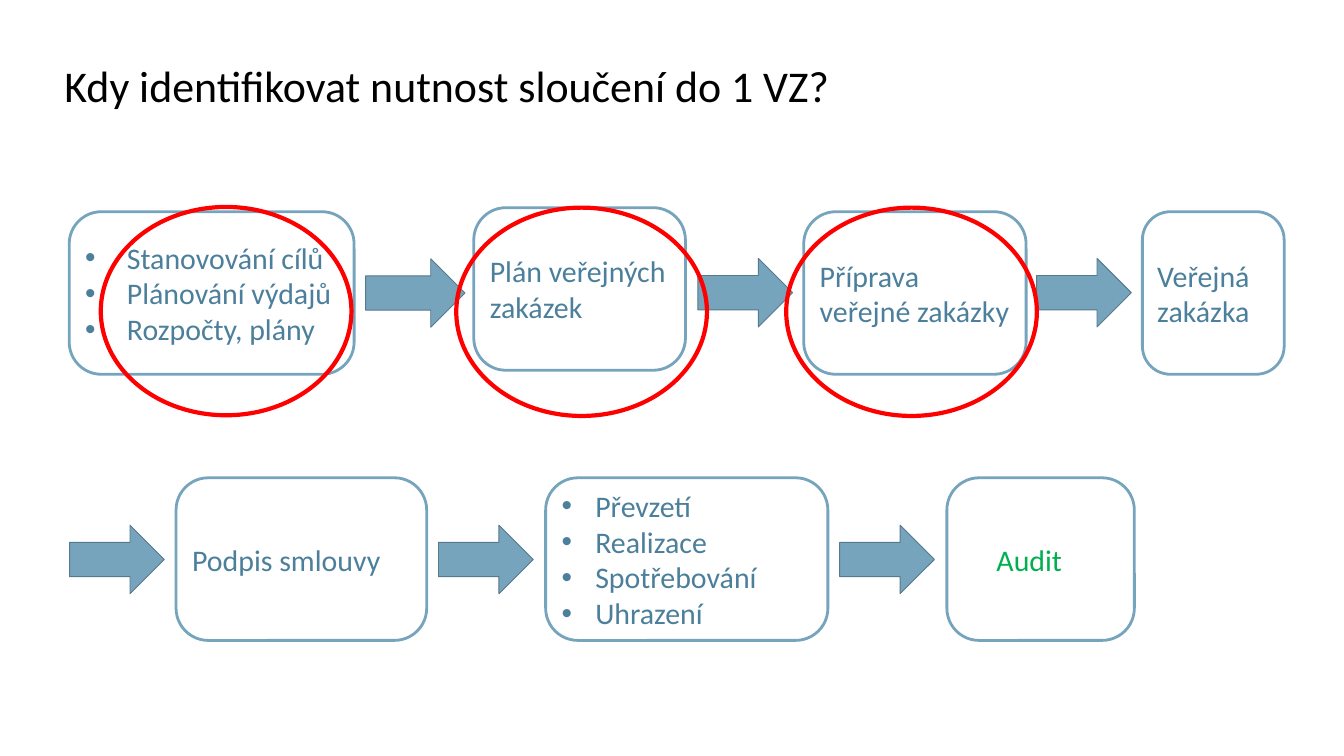
from lxml.etree import SubElement
from pptx import Presentation
from pptx.dml.color import RGBColor
from pptx.enum.shapes import MSO_SHAPE
from pptx.enum.text import MSO_ANCHOR, PP_ALIGN
from pptx.oxml.ns import qn
from pptx.util import Inches, Pt

COLORS = {"white": "FFFFFF", "black": "000000", "blue": "76A4BD", "edge": "57798C",
          "text": "4B7F9B", "red": "FF0000", "green": "00B050"}
FONT = {"name": "Calibri", "size": Pt(32)}
TITLE = {"name": "Calibri", "size": Pt(47)}
FRAME = {"word_wrap": True, "vertical_anchor": MSO_ANCHOR.MIDDLE}
BOX_H, ROW_1, ROW_2 = 2.42, 3.15, 7.11


class Deck:
    """Holds the style and the current slide and draws each kind of element."""

    def __init__(self, prs):
        self.s = prs.slides.add_slide(prs.slide_layouts[6])

    def color(self, name):
        return RGBColor.from_string(COLORS[name])

    def shape(self, kind, at, fill, line, width):
        sp = self.s.shapes.add_shape(kind, *map(Inches, at))
        sp.shadow.inherit = False
        if fill:
            sp.fill.solid()
            sp.fill.fore_color.rgb = self.color(fill)
        else:
            sp.fill.background()
        sp.line.color.rgb = self.color(line)
        sp.line.width = Pt(width)
        return sp

    def text(self, sp, lines, font, color, indent=0, bullet=False, spacing=None):
        tf = sp.text_frame
        for key, value in FRAME.items():
            setattr(tf, key, value)
        for i, line in enumerate(lines):
            p = tf.add_paragraph() if i else tf.paragraphs[0]
            p.alignment = PP_ALIGN.LEFT
            p.line_spacing = spacing
            pPr = p._p.get_or_add_pPr()
            pPr.set("marL", str(Inches(indent)))
            if bullet:
                pPr.set("indent", str(-Inches(indent)))
                SubElement(pPr, qn("a:buFont"), typeface="Arial")
                SubElement(pPr, qn("a:buChar"), char="•")
            r = p.add_run()
            r.text = line
            for key, value in font.items():
                setattr(r.font, key, value)
            r.font.color.rgb = self.color(color)

    def title(self, at, line):
        sp = self.s.shapes.add_textbox(*map(Inches, at))
        self.text(sp, [line], TITLE, "black", spacing=0.9)

    def box(self, x, y, w, lines, color="text", indent=0, bullet=False):
        sp = self.shape(MSO_SHAPE.ROUNDED_RECTANGLE, (x, y, w, BOX_H), "white", "blue", 3)
        sp.adjustments[0] = 0.198
        self.text(sp, lines, FONT, color, indent, bullet)

    def arrow(self, x, y, length=1.41):
        sp = self.shape(MSO_SHAPE.DOWN_ARROW, (x, y, 1.02, length), "blue", "edge", 1)
        sp.rotation = 270

    def ring(self, x, y):
        self.shape(MSO_SHAPE.OVAL, (x, y, 3.73, 3.1), None, "red", 4.5)


def main():
    prs = Presentation()
    prs.slide_width, prs.slide_height = Inches(20), Inches(11.25)
    deck = Deck(prs)
    deck.title((0.86, 0.81, 15.2, 1), "Kdy identifikovat nutnost sloučení do 1 VZ?")

    deck.box(7.05, 3.09, 3.15, ["Plán veřejných zakázek"])
    deck.box(11.96, ROW_1, 3.31, ["Příprava veřejné zakázky"])
    deck.box(1.03, ROW_1, 4.24, ["Stanovování cílů", "Plánování výdajů", "Rozpočty, plány"],
             indent=0.62, bullet=True)
    deck.box(17, ROW_1, 2.11, ["Veřejná zakázka"])
    deck.box(2.62, ROW_2, 3.73, ["Podpis smlouvy"])
    deck.box(8.12, ROW_2, 4.2, ["Převzetí", "Realizace", "Spotřebování", "Uhrazení"],
             indent=0.5, bullet=True)
    deck.box(14.09, ROW_2, 2.79, ["Audit"], "green", indent=0.5)

    deck.arrow(5.67, 3.62, 1.48)
    for x in (10.58, 15.62):
        deck.arrow(x, 3.65)
    for x in (1.23, 6.72, 12.69):
        deck.arrow(x, 7.62)
    for x, y in ((1.5, 3.08), (6.79, 3.09), (11.7, 3.09)):
        deck.ring(x, y)
    prs.save("out.pptx")


if __name__ == "__main__":
    main()
